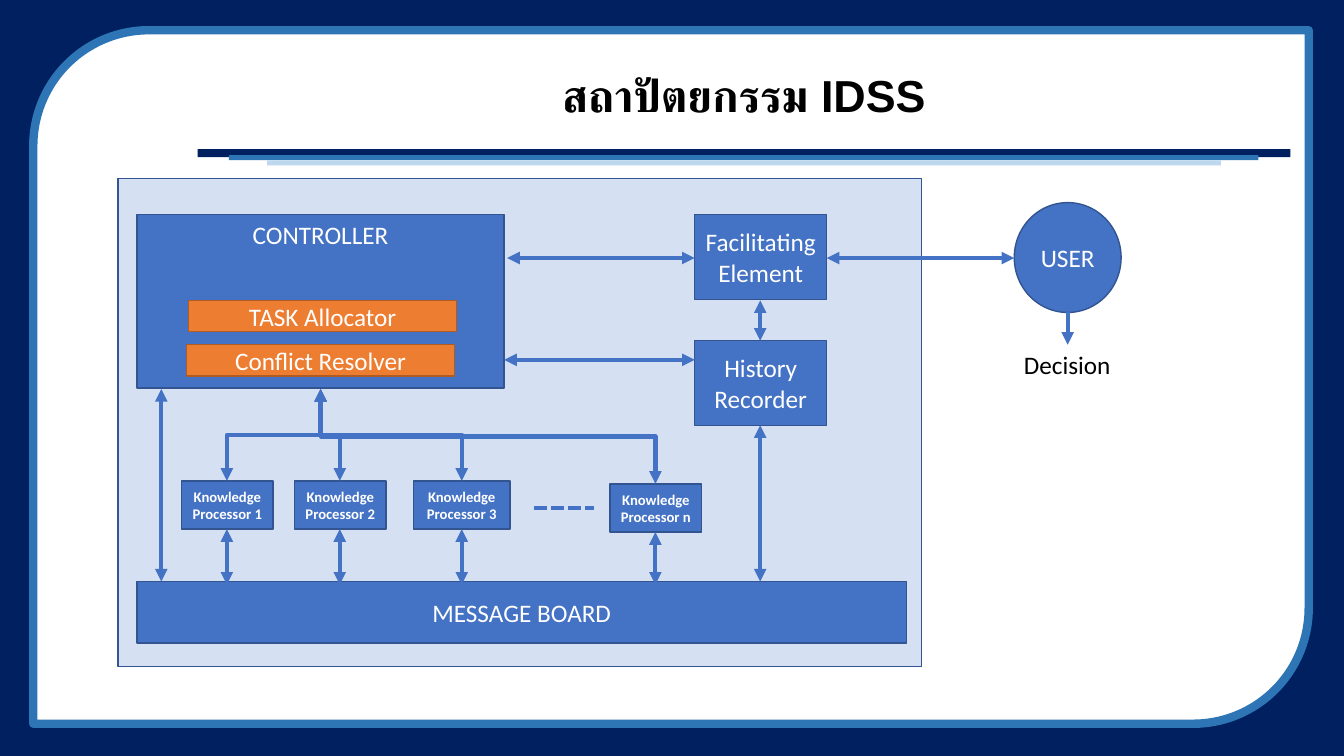
from dataclasses import dataclass
from typing import Optional

from lxml.etree import SubElement
from pptx import Presentation
from pptx.dml.color import RGBColor
from pptx.enum.dml import MSO_LINE
from pptx.enum.shapes import MSO_CONNECTOR as CONN, MSO_SHAPE as SHAPE
from pptx.enum.text import MSO_ANCHOR as ANCHOR, PP_ALIGN as ALIGN
from pptx.oxml.ns import qn
from pptx.util import Emu, Pt

PX = 9144


@dataclass(frozen=True)
class Theme:
    navy: str = "002060"
    frame: str = "2E75B6"
    pale: str = "BDD7EE"
    blue: str = "4472C4"
    blue_edge: str = "325491"
    orange: str = "ED7D31"
    orange_edge: str = "AF5C24"
    white: str = "FFFFFF"
    black: str = "000000"
    head_font: str = "Arial"
    body_font: str = "Calibri"
    title: float = 32
    body: float = 18
    small: float = 10.5
    edge: float = 1
    arrow: float = 3
    border: float = 6


T = Theme()


@dataclass(frozen=True)
class Label:
    paragraphs: tuple[str, ...]
    size: float = T.body
    color: str = T.white
    bold: bool = False
    font: str = T.body_font
    anchor: ANCHOR = ANCHOR.MIDDLE
    spacing: Optional[float] = None


@dataclass(frozen=True)
class Box:
    x: int
    y: int
    w: int
    h: int
    label: Optional[Label] = None
    fill: str = T.blue
    edge: Optional[str] = T.blue_edge
    kind: SHAPE = SHAPE.RECTANGLE
    weight: float = T.edge
    alpha: Optional[int] = None


@dataclass(frozen=True)
class Link:
    x1: int
    y1: int
    x2: int
    y2: int
    head: bool = True
    tail: bool = True
    dotted: bool = False


def px(n: float) -> Emu:
    return Emu(round(n * PX))


def rgb(color: str) -> RGBColor:
    return RGBColor.from_string(color)


def write(sp, label: Label) -> None:
    tf = sp.text_frame
    tf.word_wrap = True
    tf.vertical_anchor = label.anchor
    for i, text in enumerate(label.paragraphs):
        p = tf.paragraphs[0] if i == 0 else tf.add_paragraph()
        p.alignment = ALIGN.CENTER
        p.line_spacing = label.spacing
        for j, line in enumerate(text.split("\n")):
            if j:
                p.add_line_break()
            r = p.add_run()
            r.text = line
            r.font.name = label.font
            r.font.size = Pt(label.size)
            r.font.bold = label.bold
            r.font.color.rgb = rgb(label.color)
            SubElement(r.font._element, qn("a:cs"), typeface=label.font)


def draw_box(s, box: Box) -> None:
    sp = s.shapes.add_shape(box.kind, px(box.x), px(box.y), px(box.w), px(box.h))
    sp.shadow.inherit = False
    sp.fill.solid()
    sp.fill.fore_color.rgb = rgb(box.fill)
    if box.alpha is not None:
        color = sp._element.spPr.find(qn("a:solidFill"))[0]
        SubElement(color, qn("a:alpha"), val=str(box.alpha * 1000))
    if box.edge:
        sp.line.color.rgb = rgb(box.edge)
        sp.line.width = Pt(box.weight)
    else:
        sp.line.fill.background()
    if box.label:
        write(sp, box.label)


def draw_text(s, x: int, y: int, w: int, h: int, label: Label) -> None:
    write(s.shapes.add_textbox(px(x), px(y), px(w), px(h)), label)


def style_link(cxn, link: Link) -> None:
    cxn.line.color.rgb = rgb(T.blue)
    cxn.line.width = Pt(T.arrow)
    if link.dotted:
        cxn.line.dash_style = MSO_LINE.SQUARE_DOT
    ln = cxn.line._get_or_add_ln()
    for tag, shown in (("a:headEnd", link.head), ("a:tailEnd", link.tail)):
        if shown:
            SubElement(ln, qn(tag), type="triangle")
    SubElement(cxn._element.spPr, qn("a:effectLst"))


def draw_link(s, link: Link) -> None:
    ends = (px(n) for n in (link.x1, link.y1, link.x2, link.y2))
    style_link(s.shapes.add_connector(CONN.STRAIGHT, *ends), link)


def draw_elbow(s, link: Link) -> None:
    cx, cy = (link.x1 + link.x2) / 2, (link.y1 + link.y2) / 2
    half_w, half_h = (link.y2 - link.y1) / 2, abs(link.x2 - link.x1) / 2
    ends = (px(n) for n in (cx - half_w, cy - half_h, cx + half_w, cy + half_h))
    cxn = s.shapes.add_connector(CONN.ELBOW, *ends)
    xfrm = cxn._element.spPr.find(qn("a:xfrm"))
    rightward = link.x2 > link.x1
    xfrm.set("rot", str((270 if rightward else 90) * 60000))
    if rightward:
        xfrm.set("flipH", "1")
    style_link(cxn, link)


BACKDROP = (
    Box(0, 0, 1333, 750, fill=T.navy, edge=None),
    Box(33, 30, 1265, 688, fill=T.white, edge=T.frame,
        kind=SHAPE.ROUND_2_DIAG_RECTANGLE, weight=T.border),
    Box(196, 148, 1084, 8, fill=T.navy, edge=None),
    Box(227, 154, 1021, 5, fill=T.frame, edge=None),
    Box(265, 159, 946, 5, fill=T.pale, edge=None),
)
SYSTEM = (
    Box(117, 177, 797, 484, alpha=22),
    Box(136, 213, 364, 172, Label(("CONTROLLER",), anchor=ANCHOR.TOP)),
    Box(136, 577, 763, 61, Label(("MESSAGE BOARD",))),
    Box(689, 213, 131, 84, Label(("Facilitating\nElement",))),
    Box(689, 338, 131, 84, Label(("History", "Recorder"))),
    Box(1006, 201, 106, 109, Label(("USER",)), kind=SHAPE.OVAL),
    Box(187, 298, 266, 31, Label(("TASK Allocator",)), T.orange, T.orange_edge),
    Box(185, 342, 266, 31, Label(("Conflict Resolver",)), T.orange, T.orange_edge),
)
PROCESSORS = tuple(
    Box(x, y, w, 48, Label((f"Knowledge Processor {n}",), T.small, bold=True))
    for n, x, y, w in (("1", 180, 477, 91), ("2", 292, 477, 91),
                       ("3", 410, 477, 96), ("n", 605, 480, 91))
)
LINKS = (
    Link(160, 386, 160, 577),
    Link(754, 422, 754, 577),
    Link(754, 298, 754, 338),
    Link(689, 256, 503, 256),
    Link(689, 357, 500, 357),
    Link(1006, 256, 820, 256),
    Link(1059, 310, 1059, 342, head=False),
    Link(530, 504, 589, 504, head=False, tail=False, dotted=True),
)


def main() -> None:
    prs = Presentation()
    prs.slide_width, prs.slide_height = px(1333), px(750)
    s = prs.slides.add_slide(prs.slide_layouts[6])
    for box in BACKDROP + SYSTEM + PROCESSORS:
        draw_box(s, box)
    draw_text(s, 196, 49, 1084, 97, Label(("สถาปัตยกรรม IDSS",), T.title, T.black,
                                          True, T.head_font, spacing=0.9))
    draw_text(s, 997, 342, 123, 40, Label(("Decision",), color=T.black,
                                         anchor=ANCHOR.TOP))
    for link in LINKS:
        draw_link(s, link)
    for box in PROCESSORS:
        center = box.x + box.w // 2
        draw_link(s, Link(center, box.y + box.h, center, 580))
        draw_elbow(s, Link(318, 386, center, box.y))
    prs.save("out.pptx")


if __name__ == "__main__":
    main()
